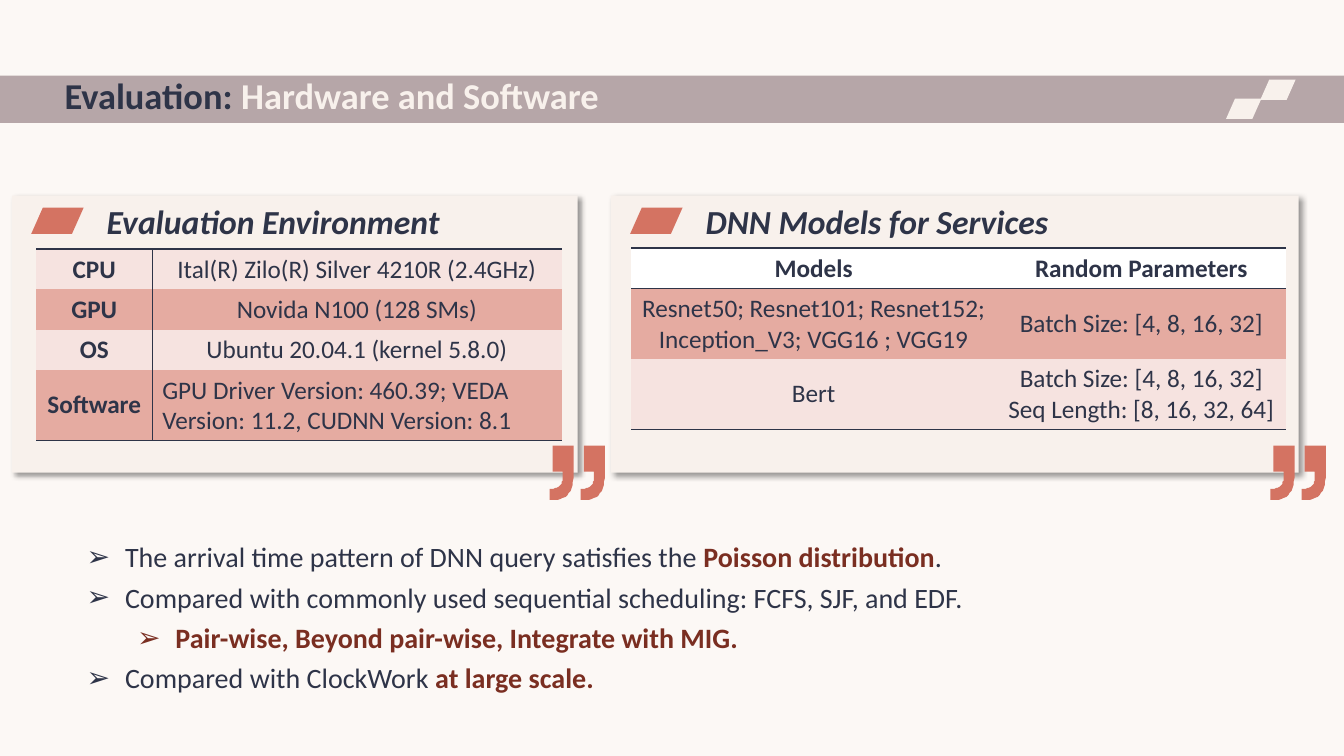
from lxml import etree
from pptx import Presentation
from pptx import util as u
from pptx.dml.color import RGBColor
from pptx.enum import shapes, text
from pptx.oxml.ns import qn

PX = 9144  # EMU per px, 100 px to the inch
FONT = "Calibri"
NO_GRID_STYLE = "{2D5ABB26-0587-4C30-8999-92F81FD0307C}"

PAPER = RGBColor(0xFC, 0xF8, 0xF5)
CREAM = RGBColor(0xF8, 0xF1, 0xEC)
MAUVE = RGBColor(0xB6, 0xA6, 0xA8)
NAVY = RGBColor(0x2E, 0x34, 0x48)
CORAL = RGBColor(0xD4, 0x73, 0x62)
ROSE = RGBColor(0xE5, 0xAB, 0xA1)
BLUSH = RGBColor(0xF6, 0xE3, 0xE0)
WHITE = RGBColor(0xFF, 0xFF, 0xFF)
BRICK = RGBColor(0x7A, 0x2E, 0x21)

ENVIRONMENT = [
    ("CPU", "Ital(R) Zilo(R) Silver 4210R (2.4GHz)"),
    ("GPU", "Novida N100 (128 SMs)"),
    ("OS", "Ubuntu 20.04.1 (kernel 5.8.0)"),
    ("Software", "GPU Driver Version: 460.39; VEDA Version: 11.2, CUDNN Version: 8.1"),
]
MODELS = [
    ("Models", "Random Parameters"),
    ("Resnet50; Resnet101; Resnet152; Inception_V3; VGG16 ; VGG19",
     "Batch Size: [4, 8, 16, 32]"),
    ("Bert", "Batch Size: [4, 8, 16, 32]\nSeq Length: [8, 16, 32, 64]"),
]
FINDINGS = [  # level, then (words, emphasised) runs
    (0, [("The arrival time pattern of DNN query satisfies the ", False),
         ("Poisson distribution", True), (".", False)]),
    (0, [("Compared with commonly used sequential scheduling: FCFS, SJF, and EDF.", False)]),
    (1, [("Pair-wise, Beyond pair-wise, Integrate with MIG.", True)]),
    (0, [("Compared with ClockWork ", False), ("at large scale.", True)]),
]


def px(*lengths):
    return [u.Emu(length * PX) for length in lengths]


def add_span(para, words, size, color, bold=False, italic=False):
    span = para.add_run()
    span.text = words
    span.font.name, span.font.size = FONT, u.Pt(size)
    span.font.bold, span.font.italic = bold, italic
    span.font.color.rgb = color


def paint(shape, color):
    shape.shadow.inherit = False
    shape.fill.solid()
    shape.fill.fore_color.rgb = color
    shape.line.fill.background()
    return shape


def add_block(parent, kind, box, color):
    return paint(parent.shapes.add_shape(kind, *px(*box)), color)


def add_slant(parent, box, color):
    slant = add_block(parent, shapes.MSO_SHAPE.PARALLELOGRAM, box, color)
    slant.adjustments[0] = 0.444


def add_drop_shadow(shape):
    effects = shape._element.spPr.find(qn("a:effectLst"))
    shadow = etree.SubElement(effects, qn("a:outerShdw"), blurRad=str(u.Pt(4)),
                              dist=str(u.Pt(3)), dir="2700000", algn="tl", rotWithShape="0")
    black = etree.SubElement(shadow, qn("a:srgbClr"), val="000000")
    etree.SubElement(black, qn("a:alpha"), val="40000")


def curve(start, pull, push, end, steps=12):
    """Points along a cubic Bezier curve, without its start."""
    return [tuple((1 - t) ** 3 * a + 3 * (1 - t) ** 2 * t * b + 3 * (1 - t) * t * t * c + t ** 3 * d
                  for a, b, c, d in zip(start, pull, push, end))
            for t in (step / steps for step in range(1, steps + 1))]


def add_quote(parent, left, top):
    comma = [(3, 0), (24, 0), (24, 28), *curve((24, 28), (24, 45), (18, 54), (5, 54)),
             (0, 54), (0, 43), *curve((0, 43), (9, 43), (13, 39), (13, 31)),
             (13, 26), (3, 26)]
    builder = parent.shapes.build_freeform(left + 3, top, scale=PX)
    for shift in (0, 31):
        points = [(left + shift + x, top + y) for x, y in comma]
        if shift:
            builder.move_to(*points[0])
        builder.add_line_segments(points[1:], close=True)
    paint(builder.convert_to_shape(), CORAL)


def add_banner(page, box):
    left, top, width, height = box
    add_block(page, shapes.MSO_SHAPE.RECTANGLE, box, MAUVE)
    for x, y in ((1250, 4), (1216, 23)):
        add_slant(page, (left + x, top + y, 35, 20), CREAM)
    title = page.shapes.title
    title.left, title.top, title.width, title.height = px(left + 54, top, 1162, height)
    page.shapes._spTree.append(title._element)  # in front of the banner
    frame = title.text_frame
    frame.auto_size = text.MSO_AUTO_SIZE.NONE
    frame.vertical_anchor = text.MSO_ANCHOR.MIDDLE
    para = frame.paragraphs[0]
    para.alignment, para.line_spacing = text.PP_ALIGN.LEFT, 0.8
    add_span(para, "Evaluation:", 26, NAVY, bold=True)
    add_span(para, " Hardware and Software", 26, CREAM, bold=True)


def add_card(page, box, heading):
    left, top, width, height = box
    card = page.shapes.add_group_shape()
    add_drop_shadow(add_block(card, shapes.MSO_SHAPE.RECTANGLE, box, CREAM))
    add_slant(card, (left + 19, top + 12, 52, 26), CORAL)
    add_quote(card, left + width - 28, top + height - 27)
    label = card.shapes.add_textbox(*px(left + 84, top, 401, 50))
    label.text_frame.word_wrap = True
    add_span(label.text_frame.paragraphs[0], heading, 24, NAVY, bold=True, italic=True)


def style_cell(cell, color, edges):
    """Fill the cell and rule only the given edges, named from L, R, T and B."""
    props = cell._tc.get_or_add_tcPr()
    for edge in "LRTB":
        line = etree.SubElement(props, qn("a:ln" + edge), w=str(u.Pt(1)))
        if edge in edges:
            fill = etree.SubElement(line, qn("a:solidFill"))
            etree.SubElement(fill, qn("a:srgbClr"), val=str(NAVY))
        else:
            etree.SubElement(line, qn("a:noFill"))
    cell.fill.solid()
    cell.fill.fore_color.rgb = color
    cell.vertical_anchor = text.MSO_ANCHOR.MIDDLE


def add_grid(page, corner, widths, heights, rows, fills, header_row):
    """Table whose first row or else first column is a bold, ruled-off header."""
    grid = page.shapes.add_table(len(rows), len(widths),
                                 *px(*corner, sum(widths), sum(heights))).table
    grid._tbl.tblPr.find(qn("a:tableStyleId")).text = NO_GRID_STYLE
    grid.first_row = grid.horz_banding = False
    for column, width in zip(grid.columns, px(*widths)):
        column.width = width
    for row, height in zip(grid.rows, px(*heights)):
        row.height = height
    for r, values in enumerate(rows):
        for c, value in enumerate(values):
            cell = grid.cell(r, c)
            edges = "T" * (r == 0) + "B" * (r == len(rows) - 1)
            if header_row:
                edges += "B" * (r == 0) + "T" * (r == 1)
            else:
                edges += "RL"[c]
            style_cell(cell, fills[r], edges)
            for i, words in enumerate(value.split("\n")):
                frame = cell.text_frame
                para = frame.add_paragraph() if i else frame.paragraphs[0]
                para.alignment = text.PP_ALIGN.CENTER
                add_span(para, words, 18, NAVY, bold=(r if header_row else c) == 0)
    return grid


def add_findings(page, box):
    body = page.placeholders[1]
    body.left, body.top, body.width, body.height = px(*box)
    frame = body.text_frame
    frame.auto_size = text.MSO_AUTO_SIZE.NONE
    for i, (level, spans) in enumerate(FINDINGS):
        para = frame.add_paragraph() if i else frame.paragraphs[0]
        para.level, para.line_spacing, para.space_before = level, 1.2, u.Pt(0)
        props = para._p.get_or_add_pPr()
        props.set("marL", str(50 * (level + 1) * PX))
        props.set("indent", str(-38 * PX))
        etree.SubElement(props, qn("a:buFont"), typeface="Arial")
        etree.SubElement(props, qn("a:buChar"), char="➢")
        for words, strong in spans:
            add_span(para, words, 20, BRICK if strong else NAVY, bold=strong)


def main():
    deck = Presentation()
    deck.slide_width, deck.slide_height = px(1333, 750)
    page = deck.slides.add_slide(deck.slide_layouts[1])
    page.background.fill.solid()
    page.background.fill.fore_color.rgb = PAPER

    add_banner(page, (0, 75, 1333, 47))
    add_card(page, (12, 194, 561, 275), "Evaluation Environment")
    environment = add_grid(page, (36, 247), (115, 406), (40, 40, 40, 70), ENVIRONMENT,
                           (BLUSH, ROSE, BLUSH, ROSE), header_row=False)
    environment.cell(3, 1).text_frame.paragraphs[0].alignment = text.PP_ALIGN.LEFT
    add_card(page, (606, 194, 682, 275), "DNN Models for Services")
    add_grid(page, (626, 246), (362, 288), (40, 70, 70), MODELS,
             (WHITE, ROSE, BLUSH), header_row=True)
    add_findings(page, (64, 524, 1251, 169))
    deck.save("out.pptx")


if __name__ == "__main__":
    main()
